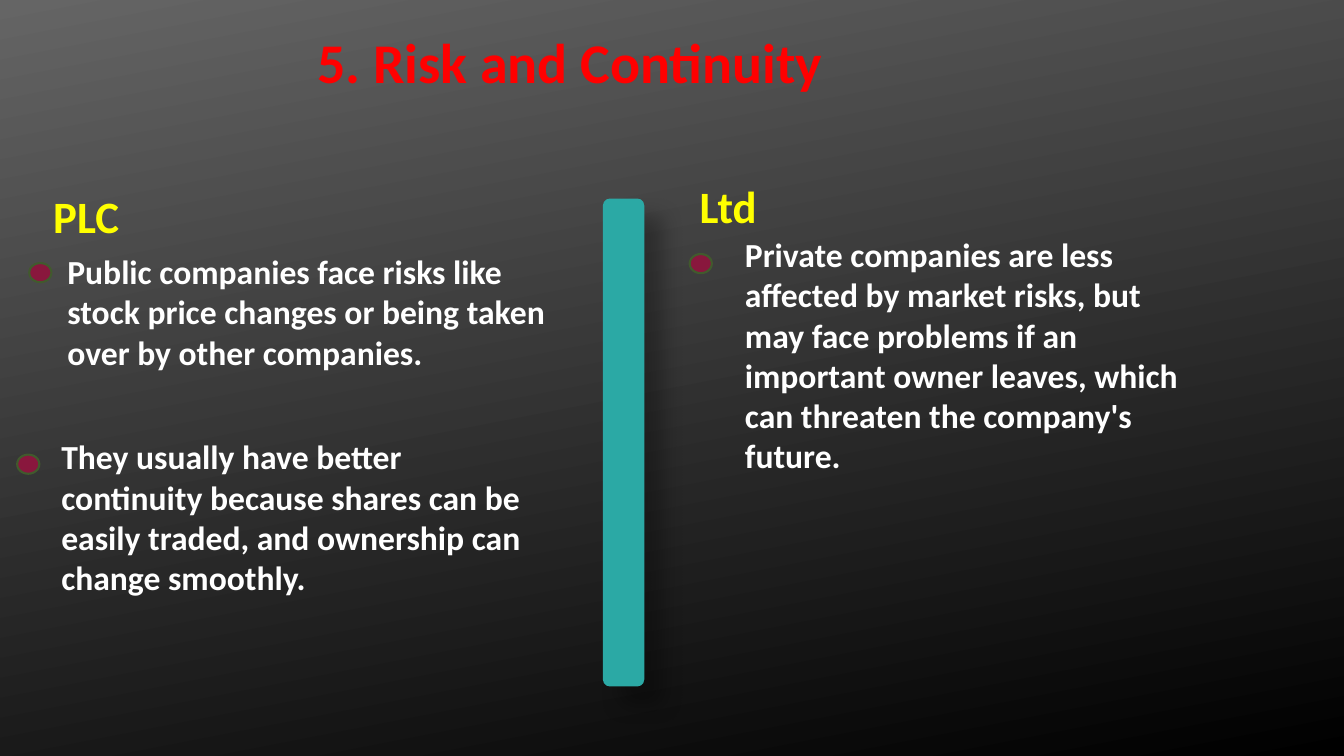
from dataclasses import dataclass

import lxml.etree
import pptx
import pptx.dml.color
import pptx.enum.shapes
import pptx.enum.text
import pptx.oxml
import pptx.oxml.ns
import pptx.shapes.autoshape
import pptx.slide
import pptx.util

Inches = pptx.util.Inches
RGBColor = pptx.dml.color.RGBColor
ShapeType = pptx.enum.shapes.MSO_SHAPE

FONT_NAME = "Calibri"
GRAY = RGBColor(0x65, 0x65, 0x65)
BLACK = RGBColor(0x00, 0x00, 0x00)
WHITE = RGBColor(0xFF, 0xFF, 0xFF)
RED = RGBColor(0xFF, 0x00, 0x00)
YELLOW = RGBColor(0xFF, 0xFF, 0x00)
TEAL = RGBColor(0x2B, 0xA9, 0xA5)
MAROON = RGBColor(0x89, 0x17, 0x3D)
GREEN = RGBColor(0x41, 0x5A, 0x2D)


@dataclass(frozen=True)
class Label:
    text: str
    left: float
    top: float
    width: float
    height: float
    size: int = 24
    color: RGBColor = WHITE


@dataclass(frozen=True)
class Marker:
    left: float
    top: float
    width: float = 0.22
    height: float = 0.19


LABELS = [
    Label("5. Risk and Continuity", 3.05, 0.22, 6.67, 0.77, 40, RED),
    Label("PLC", 0.43, 1.82, 6.83, 0.64, 32, YELLOW),
    Label("Ltd", 6.84, 1.72, 6.83, 0.64, 32, YELLOW),
    Label("Public companies face risks like stock price changes or being "
          "taken over by other companies.", 0.57, 2.44, 5.24, 1.31),
    Label("They usually have better continuity because shares can be easily "
          "traded, and ownership can change smoothly.", 0.51, 4.28, 5.01, 1.72),
    Label("Private companies are less affected by market risks, but may face "
          "problems if an important owner leaves, which can threaten the "
          "company's future.", 7.29, 2.27, 4.7, 2.52),
]
MARKERS = [Marker(0.29, 2.61), Marker(0.17, 4.51), Marker(6.84, 2.52)]


def paint_background(slide: pptx.slide.Slide) -> None:
    fill = slide.background.fill
    fill.gradient()
    fill.gradient_angle = 360 - 79  # measured counter-clockwise
    for stop, color in zip(fill.gradient_stops, (GRAY, BLACK)):
        stop.color.rgb = color


def add_soft_shadow(shape: pptx.shapes.autoshape.Shape) -> None:
    namespace = pptx.oxml.ns.nsdecls("a")
    effects = pptx.oxml.parse_xml(
        f'<a:effectLst {namespace}><a:outerShdw blurRad="{pptx.util.Pt(15)}" '
        f'dist="{pptx.util.Pt(18)}" dir="{45 * 60000}" algn="tl" rotWithShape="0">'
        f'<a:srgbClr val="{BLACK}"><a:alpha val="30000"/></a:srgbClr>'
        "</a:outerShdw></a:effectLst>")
    properties = shape.element.spPr
    for old_effects in properties.findall(pptx.oxml.ns.qn("a:effectLst")):
        properties.remove(old_effects)
    properties.append(effects)


def add_divider(slide: pptx.slide.Slide) -> None:
    divider = slide.shapes.add_shape(
        ShapeType.FLOWCHART_ALTERNATE_PROCESS,
        Inches(5.98), Inches(1.97), Inches(0.41), Inches(4.84))
    divider.fill.solid()
    divider.fill.fore_color.rgb = TEAL
    divider.line.fill.background()
    add_soft_shadow(divider)


def add_marker(slide: pptx.slide.Slide, marker: Marker) -> None:
    shape = slide.shapes.add_shape(
        ShapeType.OVAL, Inches(marker.left), Inches(marker.top),
        Inches(marker.width), Inches(marker.height))
    shape.shadow.inherit = False
    shape.fill.solid()
    shape.fill.fore_color.rgb = MAROON
    shape.line.color.rgb = GREEN
    shape.line.width = pptx.util.Pt(1.5)


def add_label(slide: pptx.slide.Slide, label: Label) -> None:
    shape = slide.shapes.add_textbox(
        Inches(label.left), Inches(label.top),
        Inches(label.width), Inches(label.height))
    text_frame = shape.text_frame
    text_frame.word_wrap = True
    text_frame.auto_size = pptx.enum.text.MSO_AUTO_SIZE.SHAPE_TO_FIT_TEXT
    text_frame.text = label.text
    font = text_frame.paragraphs[0].runs[0].font
    font.name = FONT_NAME
    font.size = pptx.util.Pt(label.size)
    font.bold = True
    font.color.rgb = label.color


def main() -> None:
    presentation = pptx.Presentation()
    presentation.slide_width = Inches(13.33)
    presentation.slide_height = Inches(7.5)
    slide = presentation.slides.add_slide(presentation.slide_layouts[6])

    # Backdrop and column divider
    paint_background(slide)
    add_divider(slide)

    # Round markers, then title, headings and statements
    for marker in MARKERS:
        add_marker(slide, marker)
    for label in LABELS:
        add_label(slide, label)

    presentation.save("out.pptx")


if __name__ == "__main__":
    main()
